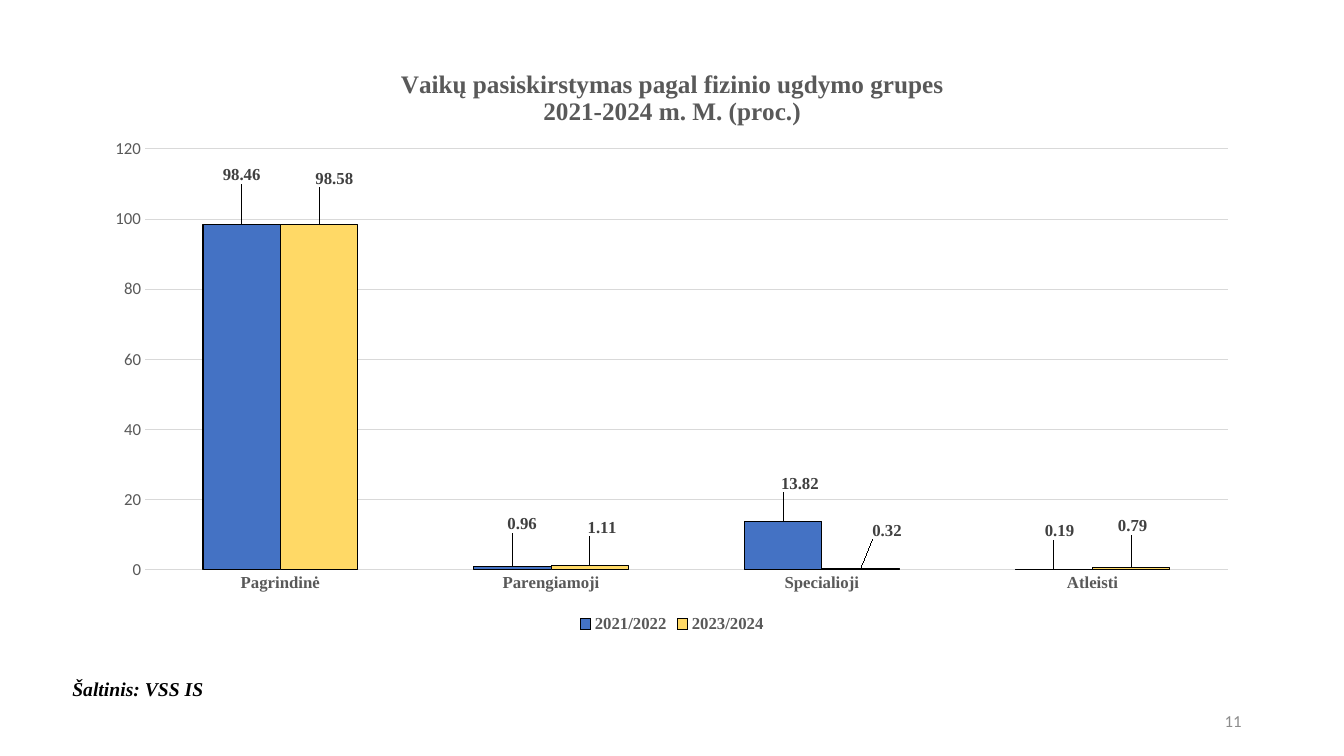
from typing import NamedTuple

from lxml import etree
from pptx import Presentation
from pptx.chart.data import CategoryChartData
from pptx.dml.color import RGBColor
from pptx.enum.chart import (XL_CHART_TYPE, XL_LABEL_POSITION,
                             XL_LEGEND_POSITION, XL_TICK_MARK)
from pptx.enum.text import MSO_ANCHOR, PP_ALIGN
from pptx.oxml.ns import qn
from pptx.util import Pt

SERIF, SANS = "Times New Roman", "Calibri"
GREY = "595959"
CHART_W, CHART_H = 828, 422.6


class Series(NamedTuple):
    name: str
    values: tuple
    color: str
    shifts: tuple  # label offsets from the bar end (x, y), in points


class Note(NamedTuple):
    text: str
    box: tuple  # left, top, width, height
    size: float
    font: str
    color: str
    emphasis: bool = False
    wrap: bool = True
    align: PP_ALIGN = PP_ALIGN.LEFT
    anchor: MSO_ANCHOR = MSO_ANCHOR.TOP


TITLE = ("Vaikų pasiskirstymas pagal fizinio ugdymo grupes",
         "2021-2024 m. M. (proc.)")
CATEGORIES = ("Pagrindinė", "Parengiamoji", "Specialioji", "Atleisti")
SERIES = (
    Series("2021/2022", (98.46, 0.96, 13.82, 0.19), "4472C4",
           ((0, -26), (7, -21), (12, -18), (4, -18))),
    Series("2023/2024", (98.58, 1.11, 0.32, 0.79), "FFD966",
           ((11, -23), (9, -18), (19, -18), (1, -20))),
)
NOTES = (
    Note("Šaltinis: VSS IS", (44.6, 480.2, 108.7, 24.5), 14, SERIF, "000000",
         emphasis=True, wrap=False),
    Note("11", (678, 500.5, 216, 28.8), 12, SANS, "8C8C8C",
         align=PP_ALIGN.RIGHT, anchor=MSO_ANCHOR.MIDDLE),
)


def rgb(color: str) -> RGBColor:
    return RGBColor.from_string(color)


def set_font(font, size: float, name: str, color: str, bold: bool = False) -> None:
    font.size, font.name, font.bold = Pt(size), name, bold
    font.color.rgb = rgb(color)


def set_layout(parent, index: int, x: float, y: float,
               size: tuple = (), edge: bool = False) -> None:
    """Place a chart part by hand; lengths are points within the chart."""
    for old in parent.findall(qn("c:layout")):
        parent.remove(old)
    layout = etree.Element(qn("c:layout"))
    parent.insert(index, layout)
    manual = etree.SubElement(layout, qn("c:manualLayout"))
    entries = [("layoutTarget", "inner")] if size else []
    if edge:
        entries += [("xMode", "edge"), ("yMode", "edge")]
    entries += [("x", x / CHART_W), ("y", y / CHART_H)]
    if size:
        entries += [("w", size[0] / CHART_W), ("h", size[1] / CHART_H)]
    for tag, value in entries:
        etree.SubElement(manual, qn(f"c:{tag}")).set("val", str(value))


def style_series(plot_series, data: Series) -> None:
    fmt = plot_series.format
    fmt.fill.solid()
    fmt.fill.fore_color.rgb = rgb(data.color)
    fmt.line.color.rgb = rgb("000000")
    fmt.line.width = Pt(0.75)
    plot_series.invert_if_negative = False
    labels = plot_series.data_labels
    labels.show_value = True
    set_font(labels.font, 12, SERIF, "404040", True)
    for i, (dx, dy) in enumerate(data.shifts):
        label = plot_series.points[i].data_label
        set_font(label.font, 12, SERIF, "404040", True)
        label.position = XL_LABEL_POSITION.OUTSIDE_END
        set_layout(label._get_or_add_dLbl(), 1, dx, dy)


def add_group_chart(s) -> None:
    data = CategoryChartData()
    data.categories = CATEGORIES
    for item in SERIES:
        data.add_series(item.name, item.values)
    chart = s.shapes.add_chart(XL_CHART_TYPE.COLUMN_CLUSTERED, Pt(66.2), Pt(32.4),
                               Pt(CHART_W), Pt(CHART_H), data).chart
    set_font(chart.font, 10, SANS, "000000")

    # Title
    tf = chart.chart_title.text_frame
    for i, line in enumerate(TITLE):
        p = tf.add_paragraph() if i else tf.paragraphs[0]
        p.text = line
        p.alignment = PP_ALIGN.CENTER
        set_font(p.font, 18, SERIF, GREY, True)
    set_layout(chart.chart_title._element, 1, 218, 15, edge=True)

    # Axes and plot area
    cat, val = chart.category_axis, chart.value_axis
    set_font(cat.tick_labels.font, 12, SERIF, GREY, True)
    set_font(val.tick_labels.font, 12, SANS, GREY)
    for axis in (cat, val):
        axis.major_tick_mark = axis.minor_tick_mark = XL_TICK_MARK.NONE
        axis.format.line.fill.background()
    val.minimum_scale, val.maximum_scale, val.major_unit = 0, 120, 20
    grid = val.major_gridlines.format.line
    grid.color.rgb = rgb("D9D9D9")
    grid.width = Pt(0.75)
    set_layout(chart._chartSpace.chart.plotArea, 0, 37.4, 74, (773.6, 300.7), True)

    # Bars
    plot = chart.plots[0]
    plot.gap_width, plot.overlap, plot.vary_by_categories = 150, 0, False
    for plot_series, item in zip(plot.series, SERIES):
        style_series(plot_series, item)

    # Legend
    chart.has_legend = True
    chart.legend.position = XL_LEGEND_POSITION.BOTTOM
    chart.legend.include_in_layout = False
    set_font(chart.legend.font, 12, SERIF, GREY, True)


def add_note(s, note: Note) -> None:
    tf = s.shapes.add_textbox(*map(Pt, note.box)).text_frame
    tf.word_wrap, tf.vertical_anchor = note.wrap, note.anchor
    p = tf.paragraphs[0]
    p.text, p.alignment = note.text, note.align
    set_font(p.font, note.size, note.font, note.color, note.emphasis)
    p.font.italic = note.emphasis


def main() -> None:
    prs = Presentation()
    prs.slide_width, prs.slide_height = Pt(960), Pt(540)
    s = prs.slides.add_slide(prs.slide_layouts[6])
    add_group_chart(s)
    for note in NOTES:
        add_note(s, note)
    prs.save("out.pptx")


if __name__ == "__main__":
    main()
